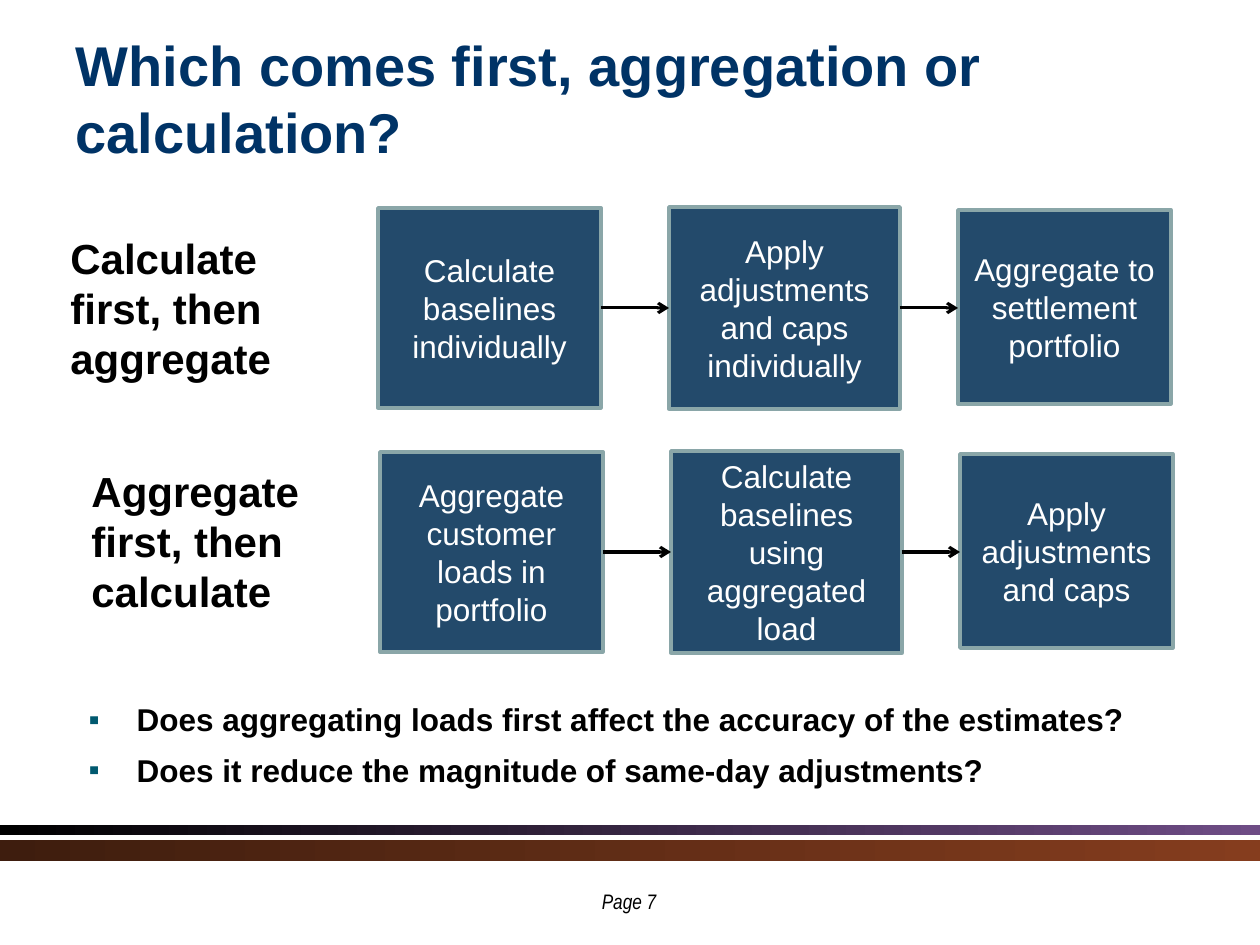
from lxml.etree import SubElement
from pptx import Presentation
from pptx.dml.color import RGBColor as RGB
from pptx.enum.shapes import MSO_CONNECTOR as Conn, MSO_SHAPE as Shape
from pptx.enum.text import MSO_ANCHOR as Anchor, MSO_AUTO_SIZE as Fit, PP_ALIGN as Align
from pptx.oxml.ns import qn
from pptx.util import Pt

SCALE = 914400 / 126
BLACK = RGB(0x00, 0x00, 0x00)
WHITE = RGB(0xFF, 0xFF, 0xFF)
NAVY = RGB(0x00, 0x33, 0x66)
STEEL = RGB(0x23, 0x4A, 0x6B)
SAGE = RGB(0x8A, 0xA6, 0xA8)
TEAL = RGB(0x00, 0x59, 0x6F)
PLUM = RGB(0x6E, 0x4C, 0x85)
UMBER = RGB(0x3E, 0x1D, 0x0E)
RUST = RGB(0x85, 0x3D, 0x1E)


def emu(*sizes):
    return [round(size * SCALE) for size in sizes]


class Deck:
    face = "Arial"

    def __init__(self, wide, high):
        self.show = Presentation()
        self.show.slide_width, self.show.slide_height = emu(wide, high)
        self.slide = self.show.slides.add_slide(self.show.slide_layouts[1])
        self.shapes = self.slide.shapes

    def style(self, para, size, color, bold=False, italic=False, face=None, align=Align.LEFT):
        para.alignment = align
        font = para.font
        font.name = face or self.face
        font.size = Pt(size)
        font.bold = bold
        font.italic = italic
        font.color.rgb = color

    def place(self, item, area):
        item.left, item.top, item.width, item.height = emu(*area)
        item.text_frame.auto_size = Fit.NONE
        item.text_frame.word_wrap = True
        return item.text_frame

    def title(self, text, area):
        frame = self.place(self.shapes.title, area)
        frame.vertical_anchor = Anchor.MIDDLE
        frame.text = text
        self.style(frame.paragraphs[0], 32, NAVY, bold=True)

    def list(self, lines, area, indent=48):
        frame = self.place(self.slide.placeholders[1], area)
        frame.text = "\n".join(lines)
        for row, para in enumerate(frame.paragraphs):
            props = para._p.get_or_add_pPr()
            step, = emu(indent)
            props.set("marL", str(step))
            props.set("indent", str(-step))
            para.space_before = Pt(7.2 if row else 0)
            tint = SubElement(props, qn("a:buClr"))
            SubElement(tint, qn("a:srgbClr"), val=str(TEAL))
            SubElement(props, qn("a:buFont"), typeface=self.face)
            SubElement(props, qn("a:buChar"), char="▪")
            self.style(para, 18, BLACK, bold=True)

    def text(self, text, area, size, **look):
        frame = self.place(self.shapes.add_textbox(*emu(*area)), area)
        frame.text = text
        self.style(frame.paragraphs[0], size, BLACK, **look)

    def rect(self, area):
        item = self.shapes.add_shape(Shape.RECTANGLE, *emu(*area))
        item.shadow.inherit = False
        return item

    def band(self, area, start, end):
        item = self.rect(area)
        item.line.fill.background()
        item.fill.gradient()
        item.fill.gradient_angle = 0
        for stop, color in zip(item.fill.gradient_stops, (start, end)):
            stop.color.rgb = color

    def box(self, text, area, pad):
        item = self.rect(area)
        item.fill.solid()
        item.fill.fore_color.rgb = STEEL
        item.line.color.rgb = SAGE
        item.line.width = Pt(2)
        frame = item.text_frame
        frame.word_wrap = True
        frame.vertical_anchor = Anchor.MIDDLE
        frame.margin_left, frame.margin_right = emu(pad, pad)
        frame.margin_top, frame.margin_bottom = emu(6, 6)
        frame.text = text
        self.style(frame.paragraphs[0], 18, WHITE, align=Align.CENTER)

    def arrow(self, left, right, y):
        item = self.shapes.add_connector(Conn.STRAIGHT, *emu(left, y, right, y))
        item.line.color.rgb = BLACK
        item.line.width = Pt(1.75)
        SubElement(item.line._get_or_add_ln(), qn("a:tailEnd"), type="arrow")
        SubElement(item._element.spPr, qn("a:effectLst"))


def main():
    deck = Deck(1260, 945)
    deck.band((0, 825, 1260, 10), BLACK, PLUM)
    deck.band((0, 840, 1260, 21), UMBER, RUST)
    deck.title("Which comes first, aggregation or calculation?", (63, 38, 1134, 120))
    deck.text("Page 7", (495, 882, 268, 28), 12,
              italic=True, face="Arial Narrow", align=Align.CENTER)

    cells = [(378, 208, 223, 200, 13), (669, 207, 231, 202, 13), (958, 210, 213, 194, 6)]
    flows = [
        ("Calculate first, then aggregate", 58, 226,
         ["Calculate baselines individually",
          "Apply adjustments and caps individually",
          "Aggregate to settlement portfolio"]),
        ("Aggregate first, then calculate", 79, 459,
         ["Aggregate customer loads in portfolio",
          "Calculate baselines using aggregated load",
          "Apply adjustments and caps"]),
    ]
    for row, (label, left, top, steps) in enumerate(flows):
        dx, dy = 2 * row, 244 * row
        deck.text(label, (left, top, 260, 165), 24, bold=True)
        for step, (x, y, wide, high, pad) in zip(steps, cells):
            deck.box(step, (x + dx, y + dy, wide, high), pad)
        for cell, after in zip(cells, cells[1:]):
            deck.arrow(cell[0] + cell[2] + dx, after[0] + dx, 308 + dy)

    deck.list(["Does aggregating loads first affect the accuracy of the estimates?",
               "Does it reduce the magnitude of same-day adjustments?"],
              (76, 694, 1155, 113))
    deck.show.save("out.pptx")


if __name__ == "__main__":
    main()
